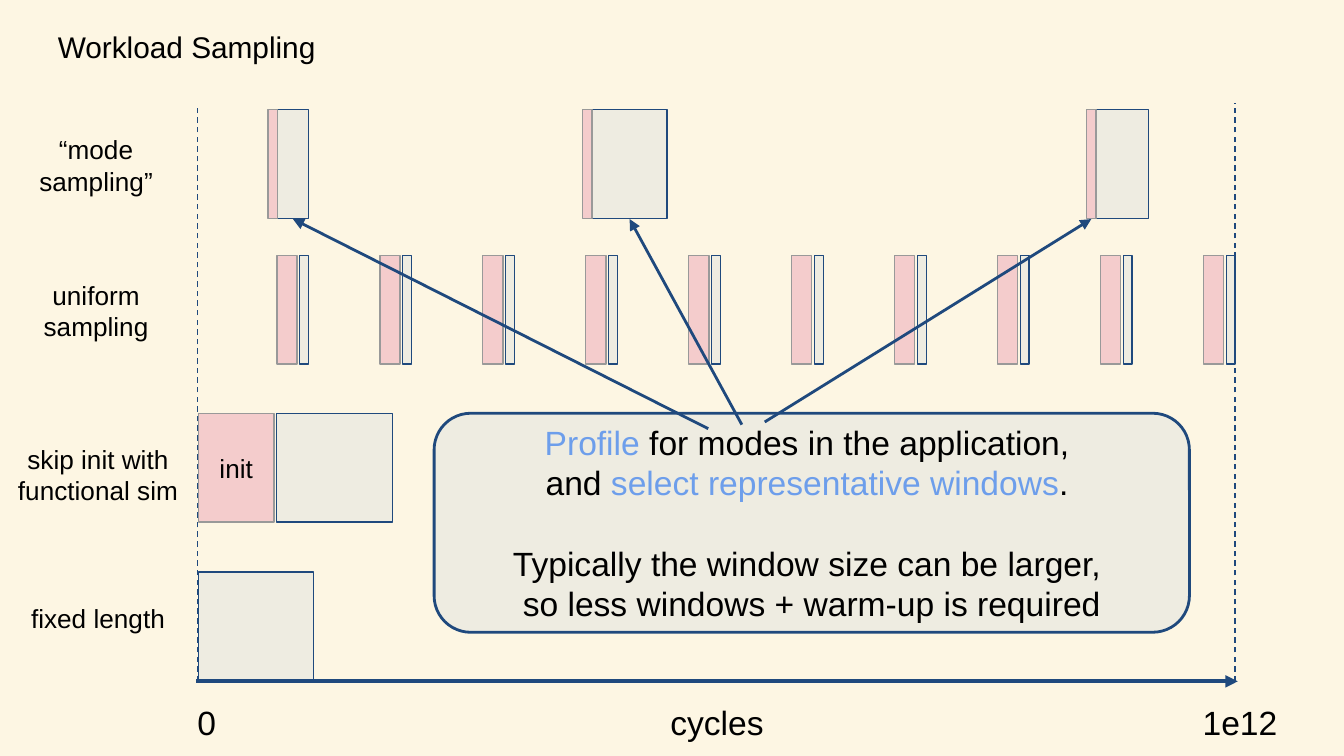
from lxml import etree
from pptx import Presentation
from pptx.dml.color import RGBColor
from pptx.enum.dml import MSO_LINE
from pptx.enum.shapes import MSO_CONNECTOR, MSO_SHAPE
from pptx.enum.text import MSO_ANCHOR, PP_ALIGN
from pptx.oxml.ns import qn
from pptx.util import Pt

RECTANGLE, ROUNDED = MSO_SHAPE.RECTANGLE, MSO_SHAPE.ROUNDED_RECTANGLE
STRAIGHT, DASH = MSO_CONNECTOR.STRAIGHT, MSO_LINE.DASH
LEFT, CENTER = PP_ALIGN.LEFT, PP_ALIGN.CENTER
TOP, MIDDLE = MSO_ANCHOR.TOP, MSO_ANCHOR.MIDDLE

PX = 4572
SLIDE_WIDTH, SLIDE_HEIGHT = 2000, 1125
FONT = "Arial"
COLORS = {
    "background": "FDF6E3",
    "window": "EEECE1",
    "navy": "1F497D",
    "warmup": "F4CCCC",
    "gray": "999999",
    "text": "000000",
    "highlight": "6D9EEB",
}

TITLE = "Workload Sampling"
ROW_LABELS = [
    (-3, 179, ["“mode", "sampling”"]),
    (-3, 396, ["uniform sampling"]),
    (0, 640, ["skip init with", "functional sim"]),
    (0, 876, ["fixed length"]),
]
AXIS_LABELS = [
    ("cycles", 67, 2000, 68, CENTER),
    ("0", 274, 88, 86, LEFT),
    ("1e12", 1770, 200, 86, LEFT),
]
CALLOUT = [
    [("Profile", "highlight"), (" for modes in the application, ", "text")],
    [("and ", "text"), ("select representative windows", "highlight"), (". ", "text")],
    [("Typically the window size can be larger, ", "text")],
    [("so less windows + warm-up is required", "text")],
]
CALLOUT_GAP_BEFORE = 2

BAR_HEIGHT = 162
MODE_TOP, UNIFORM_TOP, SKIP_TOP, FIXED_TOP = 163, 380, 615, 851
MODE_WINDOWS = [(413, 46), (881, 112), (1631, 78)]
MODE_WARMUP_WIDTH = 14
UNIFORM_COUNT, UNIFORM_FIRST, UNIFORM_LAST = 10, 446, 1825
UNIFORM_WIDTH, UNIFORM_WARMUP_WIDTH, UNIFORM_WARMUP_OFFSET = 13, 30, 34
LONG_WINDOW_WIDTH, INIT_WIDTH = 172, 113
ORIGIN_X, AXIS_Y = 295, 1014
LIMITS = [(294, 160), (1838, 154)]
MODE_ARROWS = [
    ((1104, 632), (937, 326)),
    ((1054, 638), (436, 326)),
    ((1138, 628), (1624, 326)),
]

presentation = Presentation()
presentation.slide_width = SLIDE_WIDTH * PX
presentation.slide_height = SLIDE_HEIGHT * PX
slide = presentation.slides.add_slide(presentation.slide_layouts[5])


def color(name):
    return RGBColor.from_string(COLORS[name])


def place(left, top, width, height):
    return [round(value * PX) for value in (left, top, width, height)]


def write(shape, paragraphs, size, align=CENTER, anchor=TOP, inset=20):
    frame = shape.text_frame
    frame.word_wrap = True
    frame.vertical_anchor = anchor
    frame.margin_left = frame.margin_right = inset * PX
    frame.margin_top = frame.margin_bottom = inset * PX
    frame.text = "\n".join("" for _ in paragraphs)
    for paragraph, pieces in zip(frame.paragraphs, paragraphs):
        paragraph.alignment = align
        for text, color_name in pieces:
            run = paragraph.add_run()
            run.text = text
            run.font.name = FONT
            run.font.size = Pt(size)
            run.font.color.rgb = color(color_name)


def plain(*lines):
    return [[(line, "text")] for line in lines]


def add_box(left, top, width, height, fill="window", outline="navy", weight=0.75, kind=RECTANGLE):
    shape = slide.shapes.add_shape(kind, *place(left, top, width, height))
    shape.shadow.inherit = False
    shape.fill.solid()
    shape.fill.fore_color.rgb = color(fill)
    shape.line.color.rgb = color(outline)
    shape.line.width = Pt(weight)
    return shape


def add_warmup(left, top, width):
    return add_box(left, top, width, BAR_HEIGHT, "warmup", "gray")


def add_label(left, top, width, height, lines, size, align=CENTER):
    label = slide.shapes.add_textbox(*place(left, top, width, height))
    write(label, plain(*lines), size, align)


def add_line(start, end, weight, arrow=False, dash=None):
    connector = slide.shapes.add_connector(STRAIGHT, *place(*start, *end))
    connector.line.color.rgb = color("navy")
    connector.line.width = Pt(weight)
    if dash is not None:
        connector.line.dash_style = dash
    if arrow:
        outline = connector.line._get_or_add_ln()
        etree.SubElement(outline, qn("a:tailEnd"), type="triangle")
    etree.SubElement(connector._element.spPr, qn("a:effectLst"))


slide.background.fill.solid()
slide.background.fill.fore_color.rgb = color("background")

title = slide.shapes.title
title.left, title.top, title.width, title.height = place(68, 6, 1864, 126)
write(title, plain(TITLE), 16, LEFT, MIDDLE, 18)

add_box(ORIGIN_X, FIXED_TOP, LONG_WINDOW_WIDTH, BAR_HEIGHT)
add_line((292, AXIS_Y), (1842, AXIS_Y), 2.25, arrow=True)
for text, left, width, height, align in AXIS_LABELS:
    add_label(left, 1025, width, height, [text], 18, align)
for x, top in LIMITS:
    add_line((x, AXIS_Y), (x, top), 0.75, dash=DASH)

pitch = (UNIFORM_LAST - UNIFORM_FIRST) / (UNIFORM_COUNT - 1)
for index in range(UNIFORM_COUNT):
    left = UNIFORM_FIRST + index * pitch
    add_box(left, UNIFORM_TOP, UNIFORM_WIDTH, BAR_HEIGHT)
    add_warmup(left - UNIFORM_WARMUP_OFFSET, UNIFORM_TOP, UNIFORM_WARMUP_WIDTH)

add_box(412, SKIP_TOP, LONG_WINDOW_WIDTH, BAR_HEIGHT)
init_box = add_warmup(ORIGIN_X, SKIP_TOP, INIT_WIDTH)
write(init_box, plain("init"), 14, anchor=MIDDLE)

for left, width in MODE_WINDOWS:
    add_box(left, MODE_TOP, width, BAR_HEIGHT)
    add_warmup(left - MODE_WARMUP_WIDTH, MODE_TOP, MODE_WARMUP_WIDTH)

for left, top, lines in ROW_LABELS:
    add_label(left, top, 292, 114, lines, 14)

callout = add_box(646, 615, 1124, 326, weight=1.5, kind=ROUNDED)
callout.adjustments[0] = 0.167
write(callout, CALLOUT, 18, anchor=MIDDLE)
callout.text_frame.paragraphs[CALLOUT_GAP_BEFORE].space_before = Pt(21.5)

for start, end in MODE_ARROWS:
    add_line(start, end, 1.5, arrow=True)

presentation.save("out.pptx")
